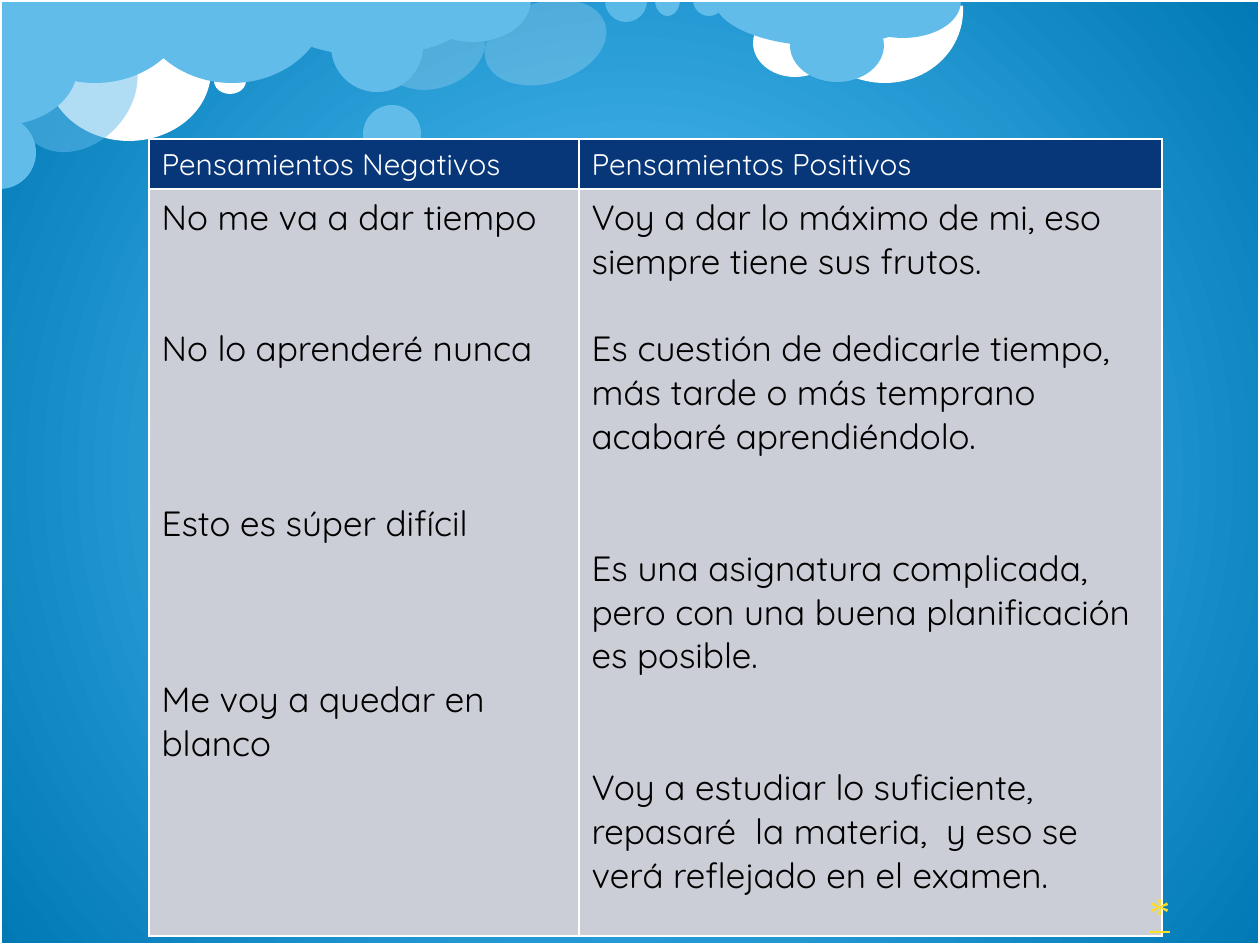
from dataclasses import dataclass
from typing import NamedTuple

from lxml import etree
from pptx import Presentation
from pptx import util as u
from pptx.dml.color import RGBColor
from pptx.enum import shapes, text
from pptx.oxml.ns import qn

PX_PER_INCH = 126
Kind = shapes.MSO_SHAPE if hasattr(shapes, "MSO_SHAPE") else shapes.MSO_AUTO_SHAPE_TYPE


@dataclass(frozen=True)
class Theme:
    white: str = "FFFFFF"
    cloud: str = "62BCE9"
    pale_cloud: str = "8FD9FB"
    sky_center: str = "5DC9FF"
    sky_edge: str = "0079B5"
    header: str = "073779"
    body: str = "CCCED7"
    ink: str = "000000"
    mark: str = "FFDE26"
    font: str = "Quicksand"
    mark_font: str = "Times New Roman"
    header_size: int = 17
    body_size: int = 20
    line_height: int = 25
    mark_size: int = 24


THEME = Theme()
HALF = (0, 108)
NEAR_HALF = (0, 107.77)


class Puff(NamedTuple):
    left: int
    top: int
    width: int
    height: int
    color: str = THEME.cloud
    kind: Kind = Kind.OVAL
    angles: tuple = ()
    rotation: float = 0
    opacity: int = 100


class Thought(NamedTuple):
    words: str
    blank_lines: int = 0


class Column(NamedTuple):
    heading: str
    width: int
    thoughts: tuple


PUFFS = (
    Puff(392, -6, 81, 108, THEME.white, rotation=72.8, opacity=20),
    Puff(47, 1, 164, 140, THEME.white),
    Puff(805, -76, 152, 165, THEME.white, Kind.ARC, (151.8, 44.48), 106.5),
    Puff(753, 9, 84, 68, THEME.white),
    Puff(-1, -83, 192, 166, kind=Kind.PIE, angles=HALF),
    Puff(262, -55, 220, 111, kind=Kind.PIE, angles=HALF),
    Puff(363, 105, 58, 58),
    Puff(24, 23, 107, 135, rotation=41.8, opacity=50),
    Puff(-37, 116, 73, 73, kind=Kind.PIE, angles=NEAR_HALF, rotation=270),
    Puff(214, 68, 32, 26, THEME.white),
    Puff(136, -83, 192, 166, kind=Kind.PIE, angles=HALF),
    Puff(714, -48, 220, 94, kind=Kind.PIE, angles=HALF),
    Puff(790, 9, 94, 73),
    Puff(845, -35, 116, 73, kind=Kind.PIE, angles=HALF),
    Puff(505, -20, 81, 125, THEME.white, rotation=72.8, opacity=20),
    Puff(605, -20, 42, 42, THEME.pale_cloud, Kind.PIE, NEAR_HALF, 0, 50),
    Puff(655, -16, 25, 32, kind=Kind.PIE, angles=NEAR_HALF),
    Puff(693, -16, 32, 32, kind=Kind.PIE, angles=NEAR_HALF),
    Puff(331, 0, 92, 92),
    Puff(415, -42, 116, 84, kind=Kind.PIE, angles=HALF),
    Puff(-59, -11, 117, 156, kind=Kind.PIE, angles=HALF, rotation=270),
)

COLUMNS = (
    Column("Pensamientos Negativos", 430, (
        Thought("No me va a dar tiempo"),
        Thought("No lo aprenderé nunca", 2),
        Thought("Esto es súper difícil", 3),
        Thought("Me voy a quedar en blanco", 3),
    )),
    Column("Pensamientos Positivos", 583, (
        Thought("Voy a dar lo máximo de mi, eso siempre tiene sus frutos."),
        Thought("Es cuestión de dedicarle tiempo, más tarde o más temprano "
                "acabaré aprendiéndolo.", 1),
        Thought("Es una asignatura complicada, pero con una buena planificación "
                "es posible.", 2),
        Thought("Voy a estudiar lo suficiente, repasaré  la materia,  y eso se "
                "verá reflejado en el examen.", 2),
    )),
)
ROW_HEIGHTS = (49, 747)


def px(value: int) -> int:
    return u.Inches(value / PX_PER_INCH)


def rgb(color: str) -> RGBColor:
    return RGBColor.from_string(color)


def paint_sky(page) -> None:
    fill = page.background.fill
    fill.gradient()
    for stop, color, position in zip(
        fill.gradient_stops, (THEME.sky_center, THEME.sky_edge), (0, 1)
    ):
        stop.color.rgb = rgb(color)
        stop.position = position
    linear = next(page.element.iter(qn("a:lin")))
    gradient = linear.getparent()
    gradient.remove(linear)
    circle = etree.SubElement(gradient, qn("a:path"), path="circle")
    etree.SubElement(
        circle, qn("a:fillToRect"), {side: "50000" for side in "ltrb"}
    )


def draw_puff(page, puff: Puff) -> None:
    shape = page.shapes.add_shape(
        puff.kind, px(puff.left), px(puff.top), px(puff.width), px(puff.height)
    )
    shape.shadow.inherit = False
    shape.rotation = puff.rotation
    for index, angle in enumerate(puff.angles):
        shape.adjustments[index] = angle
    shape.fill.solid()
    shape.fill.fore_color.rgb = rgb(puff.color)
    shape.line.fill.background()
    if puff.opacity < 100:
        color = next(shape.element.spPr.iter(qn("a:srgbClr")))
        etree.SubElement(color, qn("a:alpha"), val=str(puff.opacity * 1000))


def draw_frame(page, width: int, height: int) -> None:
    frame = page.shapes.add_shape(Kind.RECTANGLE, 0, 0, width, height)
    frame.shadow.inherit = False
    frame.fill.background()
    frame.line.color.rgb = rgb(THEME.white)
    frame.line.width = u.Pt(2)


def add_span(para, words: str, font: str, size: int, color: str):
    span = para.add_run()
    span.text = words
    span.font.name = font
    span.font.size = u.Pt(size)
    span.font.bold = False
    span.font.color.rgb = rgb(color)
    return span


def fill_cell(cell, thoughts: tuple, fill: str, size: int, color: str) -> None:
    cell.fill.solid()
    cell.fill.fore_color.rgb = rgb(fill)
    properties = cell._tc.get_or_add_tcPr()
    for index, side in enumerate(("lnL", "lnR", "lnT", "lnB")):
        border = etree.Element(qn(f"a:{side}"), w=str(u.Pt(1)))
        solid = etree.SubElement(border, qn("a:solidFill"))
        etree.SubElement(solid, qn("a:srgbClr"), val=THEME.white)
        properties.insert(index, border)
    for index, thought in enumerate(thoughts):
        frame = cell.text_frame
        para = frame.add_paragraph() if index else frame.paragraphs[0]
        if thought.blank_lines:
            para.space_before = u.Pt(thought.blank_lines * THEME.line_height)
        add_span(para, thought.words, THEME.font, size, color)


def draw_table(page) -> None:
    width = sum(column.width for column in COLUMNS)
    table = page.shapes.add_table(
        2, len(COLUMNS), px(149), px(139), px(width), px(sum(ROW_HEIGHTS))
    ).table
    table.horz_banding = False
    for row, height in zip(table.rows, ROW_HEIGHTS):
        row.height = px(height)
    for index, column in enumerate(COLUMNS):
        table.columns[index].width = px(column.width)
        fill_cell(table.cell(0, index), (Thought(column.heading),),
                  THEME.header, THEME.header_size, THEME.white)
        fill_cell(table.cell(1, index), column.thoughts,
                  THEME.body, THEME.body_size, THEME.ink)


def draw_mark(page) -> None:
    box = page.shapes.add_textbox(px(1137), px(879), px(59), px(64))
    box.text_frame.word_wrap = True
    box.text_frame.auto_size = text.MSO_AUTO_SIZE.SHAPE_TO_FIT_TEXT
    span = add_span(box.text_frame.paragraphs[0], "*",
                    THEME.mark_font, THEME.mark_size, THEME.mark)
    span.font.underline = True


def main() -> None:
    deck = Presentation()
    deck.slide_width, deck.slide_height = px(1260), px(945)
    page = deck.slides.add_slide(deck.slide_layouts[6])
    paint_sky(page)
    for puff in PUFFS:
        draw_puff(page, puff)
    draw_frame(page, deck.slide_width, deck.slide_height)
    draw_table(page)
    draw_mark(page)
    deck.save("out.pptx")


if __name__ == "__main__":
    main()
